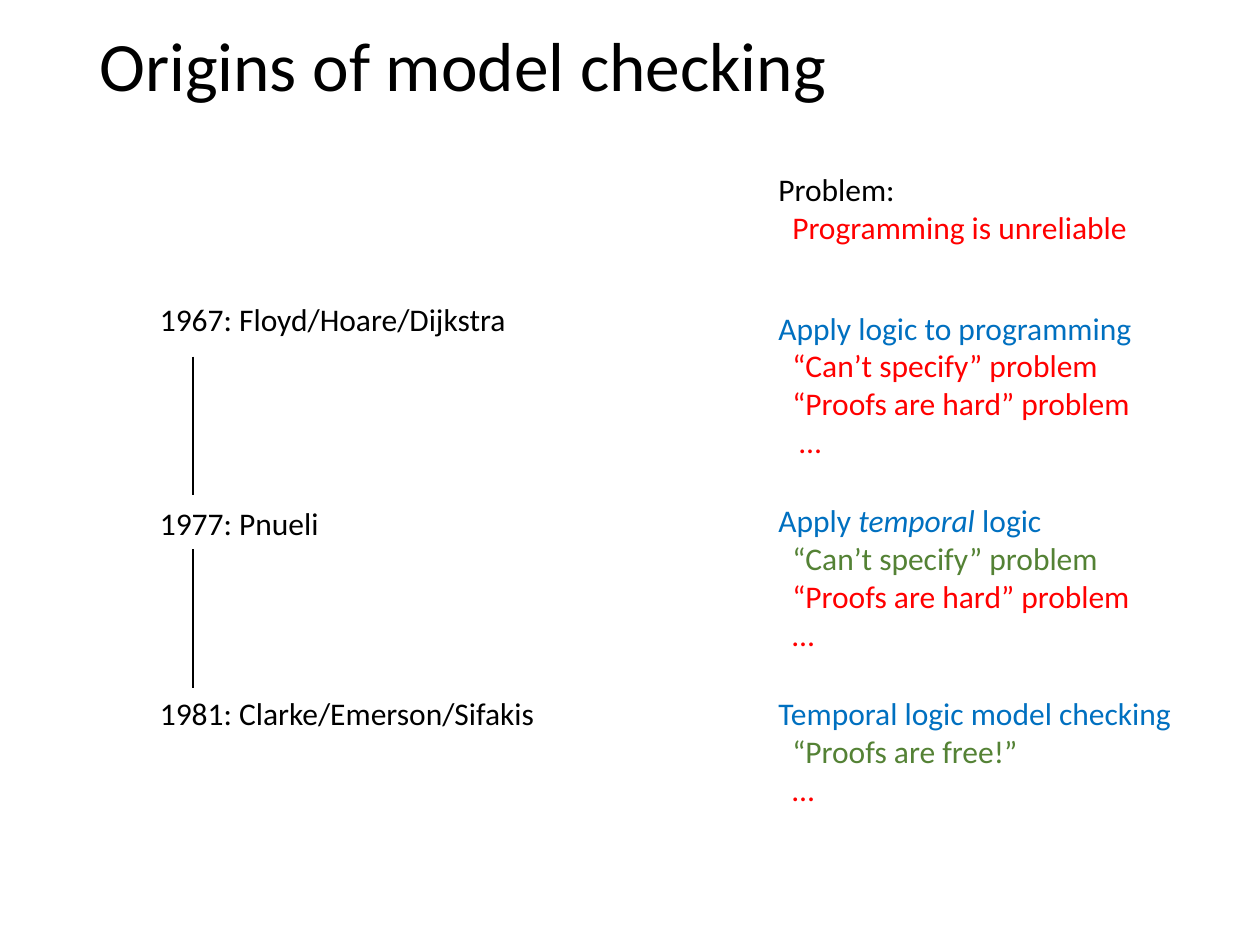
from dataclasses import dataclass

from pptx import Presentation
from pptx import util as u
from pptx.dml.color import RGBColor
from pptx.enum import shapes, text
from pptx.oxml.ns import qn
from pptx.slide import Slide

COLORS = {"plain": "000000", "idea": "0070C0", "open": "FF0000", "solved": "548235"}
FONT = "Calibri"
COLUMNS, ROWS = 100, 75
WIDTH, HEIGHT = u.Inches(10), u.Inches(7.5)
BODY_SIZE, TITLE_SIZE = 18, 39.6
YEAR_COLUMN, NOTE_COLUMN, LINK_COLUMN = 11.7, 60.8, 15.3
LINE_ROWS, MARGIN_ROWS = 3.0, 1.0
LINK_ROWS = 11
STEP = 1.1  # indent in columns


@dataclass(frozen=True)
class Line:
    words: str
    color: str
    indent: float = 0
    italic: str = ""  # the word set in italics


@dataclass(frozen=True)
class Block:
    column: float
    row: float
    columns: float
    lines: tuple[Line, ...]


PROOFS_HARD = Line("“Proofs are hard” problem", "open", STEP)
MORE = Line("…", "open", STEP)

BLOCKS = (
    Block(YEAR_COLUMN, 23.3, 30.9, (Line("1967: Floyd/Hoare/Dijkstra", "plain"),)),
    Block(NOTE_COLUMN, 24, 30.9, (
        Line("Apply logic to programming", "idea"),
        Line("“Can’t specify” problem", "open", STEP),
        PROOFS_HARD,
        Line("…", "open", 1.5 * STEP),
    )),
    Block(YEAR_COLUMN, 39.5, 14.8, (Line("1977: Pnueli", "plain"),)),
    Block(NOTE_COLUMN, 39.3, 30.3, (
        Line("Apply temporal logic", "idea", italic="temporal"),
        Line("“Can’t specify” problem", "solved", STEP),
        PROOFS_HARD,
        MORE,
    )),
    Block(YEAR_COLUMN, 54.6, 32.1, (Line("1981: Clarke/Emerson/Sifakis", "plain"),)),
    Block(NOTE_COLUMN, 54.6, 33.6, (
        Line("Temporal logic model checking", "idea"),
        Line("“Proofs are free!”", "solved", STEP),
        MORE,
    )),
    Block(NOTE_COLUMN, 13, 30, (
        Line("Problem:", "plain"),
        Line("Programming is unreliable", "open", STEP),
    )),
)
LINK_STARTS = (28.3, 43.6)


def across(columns: float) -> int:
    return round(WIDTH * columns / COLUMNS)


def down(rows: float) -> int:
    return round(HEIGHT * rows / ROWS)


def add_line(paragraph, line: Line, size: float) -> None:
    before, italic, after = line.words.partition(line.italic) if line.italic else (line.words, "", "")
    for words in filter(None, (before, italic, after)):
        span = paragraph.add_run()
        span.text = words
        if words == line.italic:
            span.font.italic = True
    paragraph.font.name = FONT
    paragraph.font.size = u.Pt(size)
    paragraph.font.color.rgb = RGBColor.from_string(COLORS[line.color])
    if line.indent:
        paragraph._p.get_or_add_pPr().set("marL", str(across(line.indent)))


def add_block(page: Slide, block: Block) -> None:
    height = down(len(block.lines) * LINE_ROWS + MARGIN_ROWS)
    box = page.shapes.add_textbox(
        across(block.column), down(block.row), across(block.columns), height)
    frame = box.text_frame
    frame.word_wrap = False
    frame.auto_size = text.MSO_AUTO_SIZE.SHAPE_TO_FIT_TEXT
    for index, line in enumerate(block.lines):
        para = frame.add_paragraph() if index else frame.paragraphs[0]
        add_line(para, line, BODY_SIZE)


def add_title(page: Slide, title: Line) -> None:
    box = page.shapes.add_textbox(across(6.9), down(1.8), across(86.2), down(7.3))
    frame = box.text_frame
    frame.word_wrap = True
    frame.vertical_anchor = text.MSO_ANCHOR.MIDDLE
    para = frame.paragraphs[0]
    para.line_spacing = 0.9
    add_line(para, title, TITLE_SIZE)


def add_link(page: Slide, row: float) -> None:
    """Join two years of the timeline with a vertical line."""
    x = across(LINK_COLUMN)
    link = page.shapes.add_connector(
        shapes.MSO_CONNECTOR.STRAIGHT, x, down(row), x, down(row + LINK_ROWS))
    link.line.color.rgb = RGBColor.from_string(COLORS["plain"])
    link.line.width = u.Pt(1)
    properties = link._element.spPr
    properties.append(properties.makeelement(qn("a:effectLst"), {}))


def main() -> None:
    deck = Presentation()
    deck.slide_width, deck.slide_height = WIDTH, HEIGHT
    page = deck.slides.add_slide(deck.slide_layouts[6])
    add_title(page, Line("Origins of model checking", "plain"))
    for block in BLOCKS:
        add_block(page, block)
    for row in LINK_STARTS:
        add_link(page, row)
    deck.save("out.pptx")


if __name__ == "__main__":
    main()
